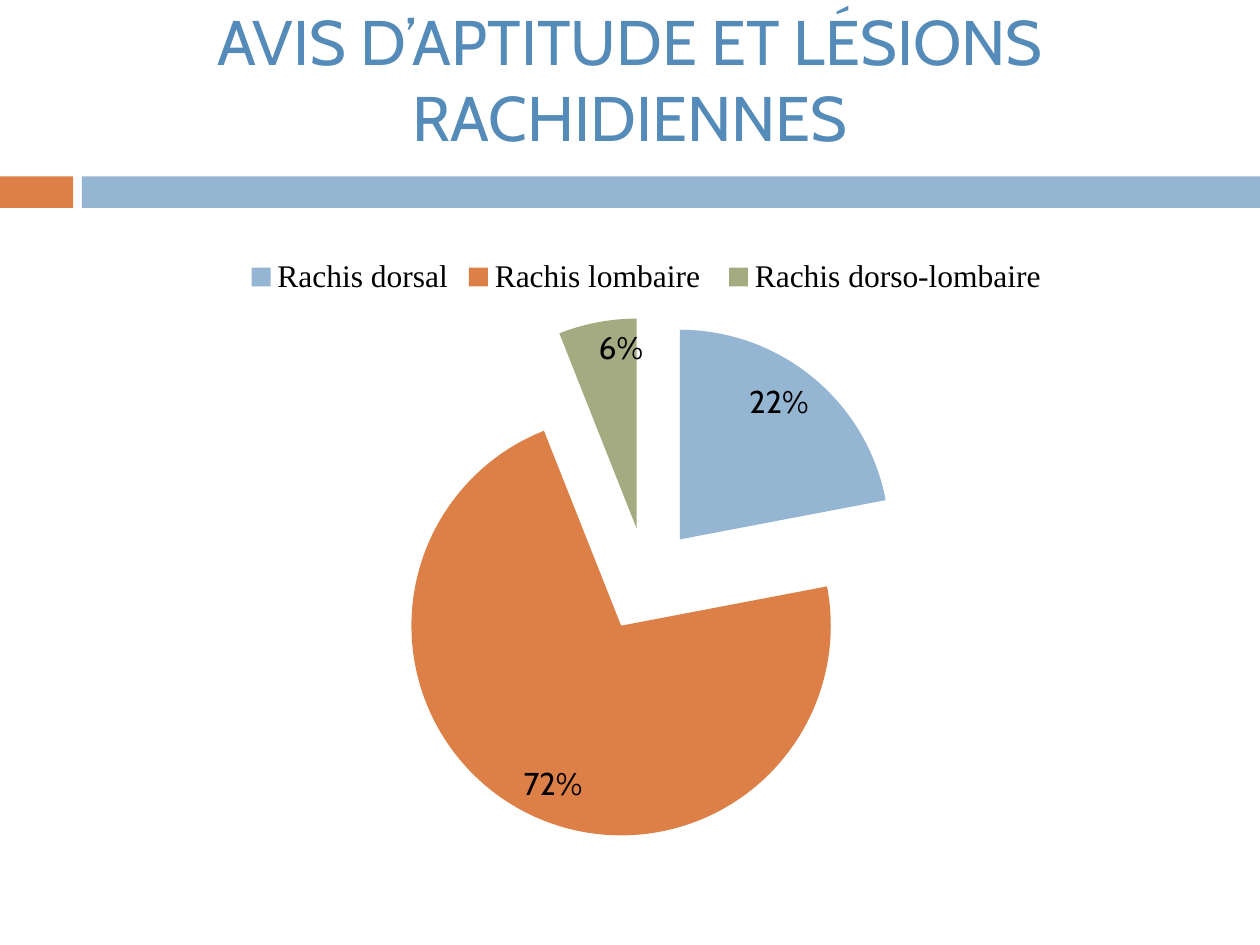
from pptx import Presentation
from pptx.chart.data import CategoryChartData
from pptx.dml.color import RGBColor
from pptx.enum.chart import XL_CHART_TYPE as ChartType
from pptx.enum.chart import XL_LABEL_POSITION as LabelPos
from pptx.enum.chart import XL_LEGEND_POSITION as LegendPos
from pptx.enum.shapes import MSO_SHAPE as Shape
from pptx.enum.text import MSO_ANCHOR as Anchor
from pptx.enum.text import PP_ALIGN as Align
from pptx.oxml import parse_xml
from pptx.oxml.ns import nsdecls
from pptx.util import Inches, Pt

BLUE = RGBColor(0x94, 0xB6, 0xD2)
ORANGE = RGBColor(0xDD, 0x80, 0x47)
GREEN = RGBColor(0xA5, 0xAB, 0x81)
TITLE_BLUE = RGBColor(0x55, 0x8B, 0xB8)
BLACK = RGBColor(0, 0, 0)

# Content
TITLE = "AVIS D’APTITUDE ET LÉSIONS RACHIDIENNES"
SLICES = [
    ("Rachis dorsal", 22, BLUE),
    ("Rachis lombaire ", 72, ORANGE),
    ("Rachis dorso-lombaire", 6, GREEN),
]
EXPLOSION = 25

# Layout, in inches
WIDTH, HEIGHT = 10, 7.5
BAND_TOP, BAND_HEIGHT = 1.4, 0.25
BANDS = [(0, 0.58, ORANGE), (0.65, WIDTH - 0.65, BLUE)]
TITLE_BOX = (0, 0, WIDTH, 1.24)
CHART_BOX = (0.67, 1.94, 8.92, 4.88)


def style_font(font, size, name, color):
    font.size, font.name = Pt(size), name
    font.color.rgb = color


def add_text(s, text, box, *, size, name, color, align, anchor):
    tf = s.shapes.add_textbox(*map(Inches, box)).text_frame
    tf.word_wrap = True
    tf.vertical_anchor = anchor
    tf.margin_top = tf.margin_bottom = 0
    p = tf.paragraphs[0]
    p.alignment = align
    r = p.add_run()
    r.text = text
    style_font(r.font, size, name, color)


def add_band(s, left, width, color):
    box = (left, BAND_TOP, width, BAND_HEIGHT)
    sp = s.shapes.add_shape(Shape.RECTANGLE, *map(Inches, box))
    sp.shadow.inherit = False
    sp.fill.solid()
    sp.fill.fore_color.rgb = color
    sp.line.fill.background()


def add_pie(s):
    data = CategoryChartData()
    data.categories = [name for name, _, _ in SLICES]
    data.add_series("Series 1", [value for _, value, _ in SLICES])
    chart = s.shapes.add_chart(ChartType.PIE, *map(Inches, CHART_BOX), data).chart
    chart.has_title = False
    style_font(chart.font, 18, "Cabin", BLACK)

    # Legend
    chart.has_legend = True
    chart.legend.position = LegendPos.TOP
    chart.legend.include_in_layout = False
    style_font(chart.legend.font, 18, "Times New Roman", BLACK)

    # Percent labels
    plot = chart.plots[0]
    plot.vary_by_categories = True
    plot.has_data_labels = True
    labels = plot.data_labels
    labels.show_value = False
    labels.show_percentage = True
    labels.number_format, labels.number_format_is_linked = "0%", False
    labels.position = LabelPos.INSIDE_END
    style_font(labels.font, 18, "Cabin", BLACK)

    # Slice colours, each slice pulled out
    series = plot.series[0]
    for i, (_, _, color) in enumerate(SLICES):
        fill = series.points[i].format.fill
        fill.solid()
        fill.fore_color.rgb = color
    for sp_pr in series._element.xpath("c:dPt/c:spPr"):
        sp_pr.addprevious(parse_xml(
            f'<c:explosion {nsdecls("c")} val="{EXPLOSION}"/>'))


def main():
    prs = Presentation()
    prs.slide_width, prs.slide_height = Inches(WIDTH), Inches(HEIGHT)
    s = prs.slides.add_slide(prs.slide_layouts[6])
    for band in BANDS:
        add_band(s, *band)
    add_text(s, TITLE, TITLE_BOX, size=36, name="Cabin", color=TITLE_BLUE,
             align=Align.CENTER, anchor=Anchor.MIDDLE)
    add_pie(s)
    prs.save("out.pptx")


if __name__ == "__main__":
    main()
